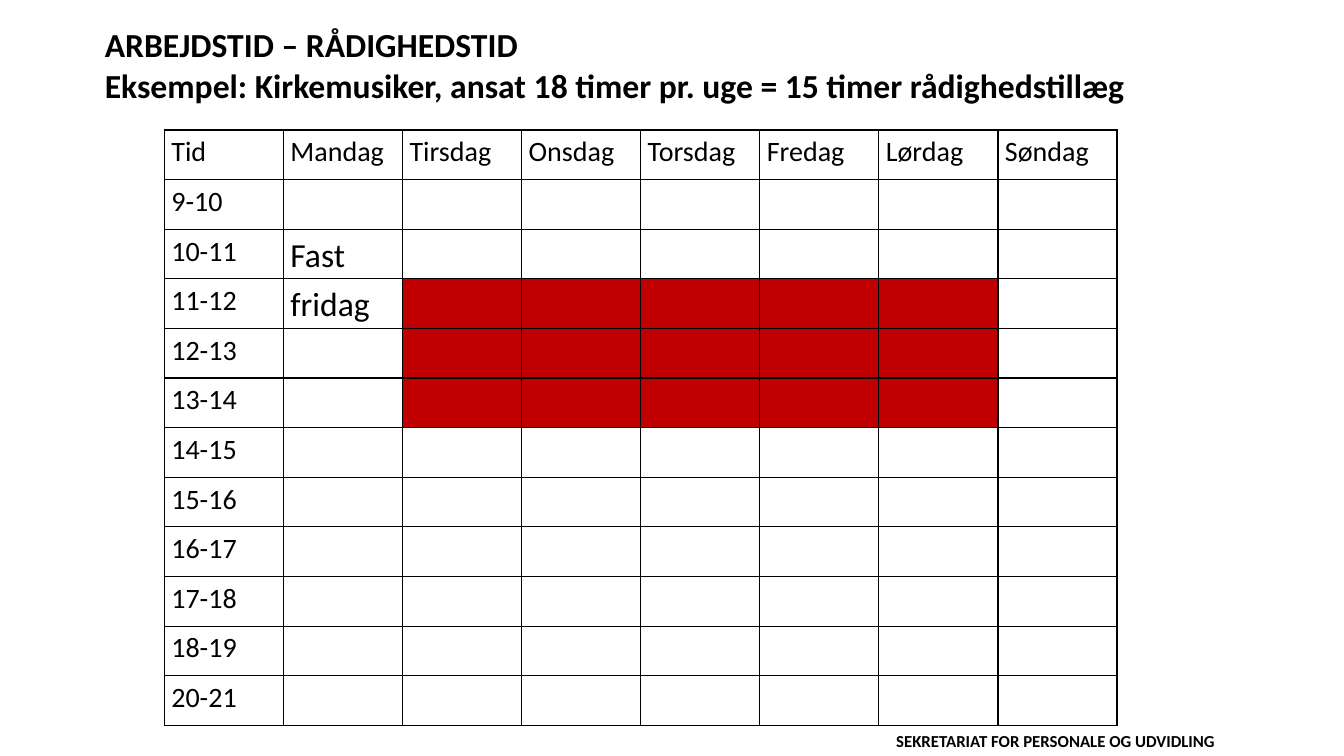
"""Build a weekly availability schedule slide for a church musician."""
from lxml import etree
from pptx import Presentation
from pptx.dml.color import RGBColor
from pptx.enum.text import MSO_ANCHOR, MSO_AUTO_SIZE, PP_ALIGN
from pptx.oxml.ns import qn
from pptx.util import Inches, Pt

COLORS = {"text": "000000", "border": "000000", "free": "FFFFFF", "on_call": "C00000"}
FONT = "Calibri"
TITLE = [
    "ARBEJDSTID – RÅDIGHEDSTID",
    "Eksempel: Kirkemusiker, ansat 18 timer pr. uge = 15 timer rådighedstillæg",
]
FOOTER = "SEKRETARIAT FOR PERSONALE OG UDVIDLING"
HEADERS = ["Tid", "Mandag", "Tirsdag", "Onsdag", "Torsdag", "Fredag", "Lørdag", "Søndag"]
HOURS = [f"{h}-{h + 1}" for h in [*range(9, 19), 20]]
DAY_OFF = {(2, 1): "Fast", (3, 1): "fridag"}
ON_CALL_ROWS = range(3, 6)
ON_CALL_COLS = range(2, 7)


def rgb(name):
    return RGBColor.from_string(COLORS[name])


def format_paragraph(p, size, bold=False):
    p.alignment = PP_ALIGN.LEFT
    p.font.name = FONT
    p.font.size = Pt(size)
    p.font.bold = bold
    p.font.color.rgb = rgb("text")


def fill_text(s, box, lines, size):
    s.left, s.top, s.width, s.height = (Inches(v) for v in box)
    tf = s.text_frame
    tf.word_wrap = True
    tf.auto_size = MSO_AUTO_SIZE.NONE
    tf.vertical_anchor = MSO_ANCHOR.TOP
    tf.text = "\n".join(lines)
    for p in tf.paragraphs:
        format_paragraph(p, size, bold=True)


def add_borders(cell):
    tc_pr = cell._tc.get_or_add_tcPr()
    for i, side in enumerate(("lnL", "lnR", "lnT", "lnB")):
        ln = etree.Element(qn(f"a:{side}"), w=str(Pt(1)))
        fill = etree.SubElement(ln, qn("a:solidFill"))
        etree.SubElement(fill, qn("a:srgbClr"), val=COLORS["border"])
        tc_pr.insert(i, ln)


def format_cell(cell, text, size, color):
    cell.fill.solid()
    cell.fill.fore_color.rgb = rgb(color)
    add_borders(cell)
    if text:
        cell.margin_left = cell.margin_right = Inches(0.07)
        cell.margin_top = cell.margin_bottom = 0
        cell.text = text
        p = cell.text_frame.paragraphs[0]
        p.line_spacing = 1.15
        format_paragraph(p, size)


def add_schedule(slide):
    box = (Inches(v) for v in (1.63, 1.29, 9.45, 5.91))
    table = slide.shapes.add_table(len(HOURS) + 1, len(HEADERS), *box).table
    table.first_row = table.horz_banding = False
    labels = {(0, c): day for c, day in enumerate(HEADERS)}
    labels.update({(r, 0): hour for r, hour in enumerate(HOURS, 1)})
    labels.update(DAY_OFF)
    for r in range(len(HOURS) + 1):
        for c in range(len(HEADERS)):
            on_call = r in ON_CALL_ROWS and c in ON_CALL_COLS
            format_cell(table.cell(r, c), labels.get((r, c)),
                        24 if (r, c) in DAY_OFF else 20,
                        "on_call" if on_call else "free")


def main():
    prs = Presentation()
    prs.slide_width, prs.slide_height = Inches(13.33), Inches(7.5)
    slide = prs.slides.add_slide(prs.slide_layouts[5])
    footer = slide.shapes.add_textbox(0, 0, 0, 0)
    fill_text(footer, (8.79, 7.2, 3.59, 0.3), [FOOTER], 12)
    fill_text(slide.shapes.title, (0.94, 0.19, 11.61, 0.91), TITLE, 24)
    add_schedule(slide)
    prs.save("out.pptx")


if __name__ == "__main__":
    main()
